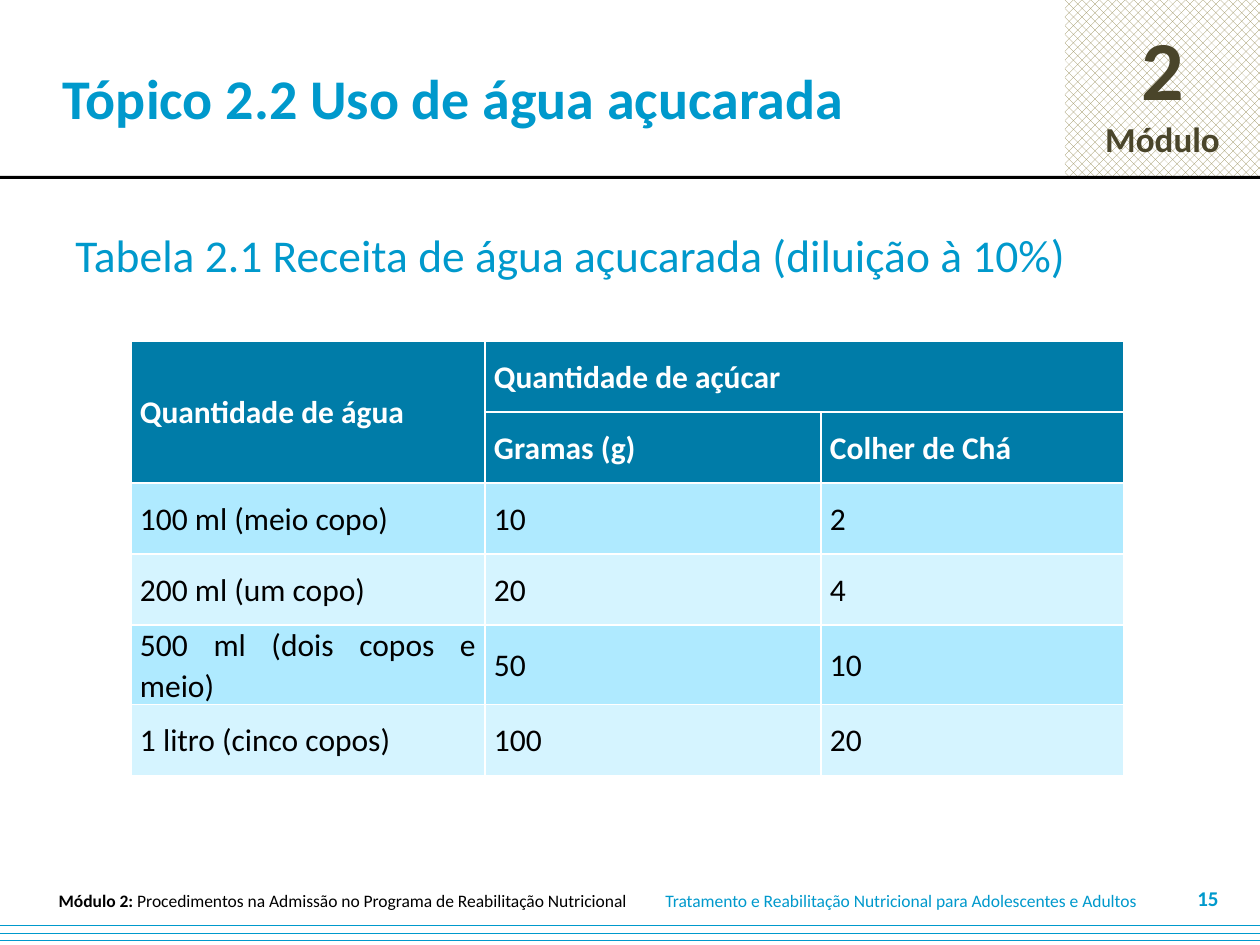
import pptx
import pptx.util
import pptx.oxml
from pptx.dml.color import RGBColor
from pptx.enum.dml import MSO_PATTERN
from pptx.enum.shapes import MSO_SHAPE
from pptx.enum.text import MSO_ANCHOR, PP_ALIGN
from pptx.oxml.ns import nsdecls

SCALE = 914400 / 126
FONT = "Calibri"
BLUE = RGBColor(0x00, 0x99, 0xCC)
HEADER_BLUE = RGBColor(0x00, 0x7C, 0xA8)
BAND_DARK = RGBColor(0xAF, 0xEA, 0xFF)
BAND_LIGHT = RGBColor(0xD5, 0xF4, 0xFF)
OLIVE = RGBColor(0x94, 0x8A, 0x54)
DARK_OLIVE = RGBColor(0x4A, 0x45, 0x2A)
BLACK = RGBColor(0, 0, 0)
WHITE = RGBColor(255, 255, 255)

COLUMN_WIDTHS = [354, 336, 303]
ROW_HEIGHT = 71
HEADER_ROWS = 2
ROWS = [
    ["Quantidade de água", "Quantidade de açúcar", ""],
    ["", "Gramas (g)", "Colher de Chá"],
    ["100 ml (meio copo)", "10", "2"],
    ["200 ml (um copo)", "20", "4"],
    ["500 ml (dois copos e meio)", "50", "10"],
    ["1 litro (cinco copos)", "100", "20"],
]


def px(length):
    return pptx.util.Emu(round(length * SCALE))


def style_paragraph(para, size, color, bold=False, align=PP_ALIGN.LEFT):
    para.alignment = align
    para.font.name = FONT
    para.font.size = pptx.util.Pt(size)
    para.font.bold = bold
    para.font.color.rgb = color


def add_rectangle(page, left, top, width, height, color, pattern=None):
    box = page.shapes.add_shape(
        MSO_SHAPE.RECTANGLE, px(left), px(top), px(width), px(height))
    box.shadow.inherit = False
    box.line.fill.background()
    if pattern is None:
        box.fill.solid()
    else:
        box.fill.patterned()
        box.fill.pattern = pattern
        box.fill.back_color.rgb = WHITE
    box.fill.fore_color.rgb = color
    return box


def add_text(page, left, top, width, height, text, size, color, bold=False,
             align=PP_ALIGN.LEFT, anchor=MSO_ANCHOR.MIDDLE, wrap=True):
    box = page.shapes.add_textbox(px(left), px(top), px(width), px(height))
    frame = box.text_frame
    frame.word_wrap = wrap
    frame.vertical_anchor = anchor
    para = frame.paragraphs[0]
    para.text = text
    style_paragraph(para, size, color, bold, align)
    return box


def add_module_badge(page):
    box = add_rectangle(page, 1065, 0, 195, 176, OLIVE, MSO_PATTERN.PERCENT_50)
    frame = box.text_frame
    frame.vertical_anchor = MSO_ANCHOR.MIDDLE
    frame.text = "2\nMódulo"
    for para, size in zip(frame.paragraphs, [48, 20]):
        style_paragraph(para, size, DARK_OLIVE, True, PP_ALIGN.CENTER)


def add_footer(page):
    add_rectangle(page, 0, 918, 1260, 27, BLUE, MSO_PATTERN.DASHED_HORIZONTAL)
    add_text(page, 653, 888, 510, 25,
             "Tratamento e Reabilitação Nutricional para Adolescentes e Adultos",
             10, BLUE, wrap=False)
    box = add_text(page, 36, 888, 613, 25, "Módulo 2: ", 10, BLACK,
                   align=PP_ALIGN.CENTER, wrap=False)
    para = box.text_frame.paragraphs[0]
    para.runs[0].font.bold = True
    span = para.add_run()
    span.text = "Procedimentos na Admissão no Programa de Reabilitação Nutricional"
    add_text(page, 1168, 882, 63, 32, "15", 12, BLUE, True, PP_ALIGN.RIGHT)


def add_borders(cell):
    properties = cell._tc.get_or_add_tcPr()
    for side in ["lnL", "lnR", "lnT", "lnB"]:
        properties.append(pptx.oxml.parse_xml(
            f'<a:{side} {nsdecls("a")} w="12700"><a:solidFill>'
            f'<a:srgbClr val="{WHITE}"/></a:solidFill></a:{side}>'))


def style_cell(cell, text, fill, color, bold):
    add_borders(cell)
    cell.fill.solid()
    cell.fill.fore_color.rgb = fill
    cell.vertical_anchor = MSO_ANCHOR.MIDDLE
    cell.margin_left = cell.margin_right = px(9)
    cell.margin_top = cell.margin_bottom = 0
    para = cell.text_frame.paragraphs[0]
    para.text = text
    para.line_spacing = 1.05
    style_paragraph(para, 18, color, bold, PP_ALIGN.JUSTIFY)


def add_recipe_table(page):
    table = page.shapes.add_table(
        len(ROWS), len(COLUMN_WIDTHS), px(131), px(341),
        px(sum(COLUMN_WIDTHS)), px(ROW_HEIGHT * len(ROWS))).table
    for column, width in zip(table.columns, COLUMN_WIDTHS):
        column.width = px(width)
    for row_index, texts in enumerate(ROWS):
        table.rows[row_index].height = px(ROW_HEIGHT)
        header = row_index < HEADER_ROWS
        band = BAND_LIGHT if row_index % 2 else BAND_DARK
        for column_index, text in enumerate(texts):
            style_cell(table.cell(row_index, column_index), text,
                       HEADER_BLUE if header else band,
                       WHITE if header else BLACK, header)
    table.cell(0, 0).merge(table.cell(1, 0))
    table.cell(0, 1).merge(table.cell(0, 2))


def main():
    deck = pptx.Presentation()
    deck.slide_width, deck.slide_height = px(1260), px(945)
    page = deck.slides.add_slide(deck.slide_layouts[6])
    add_module_badge(page)
    add_rectangle(page, -2, 176, 1262, 3, BLACK)
    add_footer(page)
    title = add_text(page, 0, 0, 1081, 195, "Tópico 2.2 Uso de água açucarada",
                     32, BLUE, True)
    title.text_frame.margin_left = px(63)
    add_text(page, 63, 221, 1134, 80,
             "Tabela 2.1 Receita de água açucarada (diluição à 10%)",
             26, BLUE, anchor=MSO_ANCHOR.TOP)
    add_recipe_table(page)
    deck.save("out.pptx")


if __name__ == "__main__":
    main()
